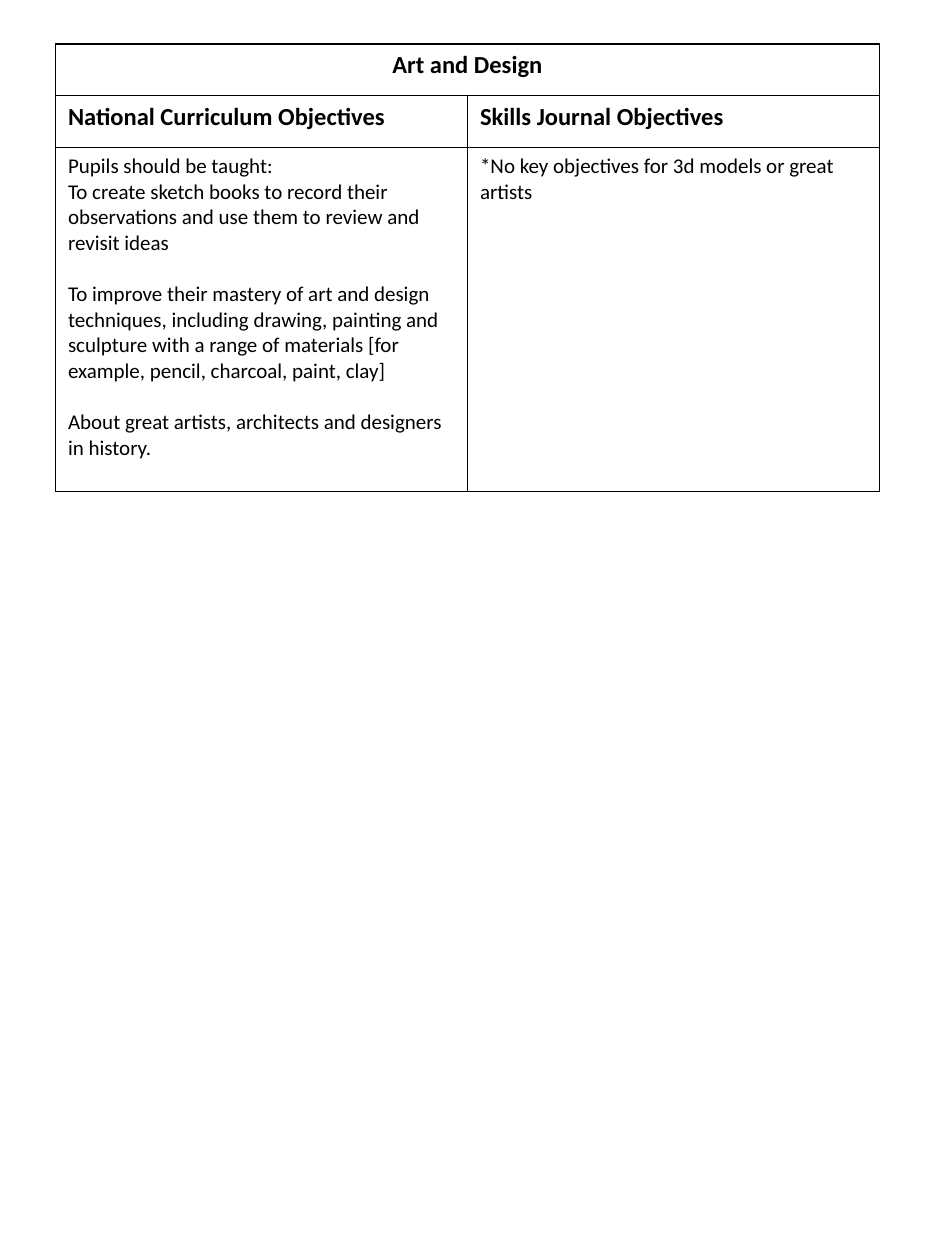
from dataclasses import dataclass

from lxml import etree
from pptx import Presentation
from pptx.dml.color import RGBColor
from pptx.enum.text import PP_ALIGN
from pptx.oxml.ns import qn
from pptx.util import Inches, Pt

CENTER = PP_ALIGN.CENTER
LEFT = PP_ALIGN.LEFT
BLANK_LAYOUT = 6


@dataclass(frozen=True)
class Theme:
    font: str = "Calibri"
    ink: str = "000000"
    heading_size: float = 14
    body_size: float = 12
    line_gap: float = 14.65
    border_width: float = 1


THEME = Theme()
SLIDE_WIDTH, SLIDE_HEIGHT = Inches(7.5), Inches(10)
TABLE_BOX = (Inches(0.44), Inches(0.35), Inches(6.54), Inches(3.55))
HEADER_HEIGHT = Inches(0.41)

TITLE = "Art and Design"
HEADINGS = ("National Curriculum Objectives", "Skills Journal Objectives")
OBJECTIVES = (
    (
        ("Pupils should be taught:", 0),
        ("To create sketch books to record their observations and use them "
         "to review and revisit ideas", 0),
        ("To improve their mastery of art and design techniques, including "
         "drawing, painting and sculpture with a range of materials "
         "[for example, pencil, charcoal, paint, clay]", THEME.line_gap),
        ("About great artists, architects and designers in history.",
         THEME.line_gap),
    ),
    (("*No key objectives for 3d models or great artists", 0),),
)


def style_cell(cell):
    properties = cell._tc.get_or_add_tcPr()
    for side in ("a:lnL", "a:lnR", "a:lnT", "a:lnB"):
        line = etree.SubElement(properties, qn(side), w=str(Pt(THEME.border_width)))
        fill = etree.SubElement(line, qn("a:solidFill"))
        etree.SubElement(fill, qn("a:srgbClr"), val=THEME.ink)
    cell.fill.background()


def write_cell(cell, lines, size, bold=False, alignment=LEFT):
    for index, (text, gap) in enumerate(lines):
        frame = cell.text_frame
        paragraph = frame.add_paragraph() if index else frame.paragraphs[0]
        paragraph.alignment = alignment
        paragraph.space_before = Pt(gap)
        run = paragraph.add_run()
        run.text = text
        run.font.name = THEME.font
        run.font.size = Pt(size)
        run.font.bold = bold
        run.font.color.rgb = RGBColor.from_string(THEME.ink)


def add_objectives_table(slide, box):
    left, top, width, height = box
    table = slide.shapes.add_table(3, len(HEADINGS), left, top, width, height).table
    table.first_row = False
    table.horz_banding = False
    for column in table.columns:
        column.width = width // len(HEADINGS)
    row_heights = (HEADER_HEIGHT, HEADER_HEIGHT, height - 2 * HEADER_HEIGHT)
    for row, row_height in zip(table.rows, row_heights):
        row.height = row_height
        for cell in row.cells:
            style_cell(cell)

    table.cell(0, 0).merge(table.cell(0, len(HEADINGS) - 1))
    write_cell(table.cell(0, 0), [(TITLE, 0)], THEME.heading_size, True, CENTER)
    for index, (heading, objectives) in enumerate(zip(HEADINGS, OBJECTIVES)):
        write_cell(table.cell(1, index), [(heading, 0)], THEME.heading_size, True)
        write_cell(table.cell(2, index), objectives, THEME.body_size)


def main():
    presentation = Presentation()
    presentation.slide_width = SLIDE_WIDTH
    presentation.slide_height = SLIDE_HEIGHT
    slide = presentation.slides.add_slide(presentation.slide_layouts[BLANK_LAYOUT])
    add_objectives_table(slide, TABLE_BOX)
    presentation.save("out.pptx")


if __name__ == "__main__":
    main()
